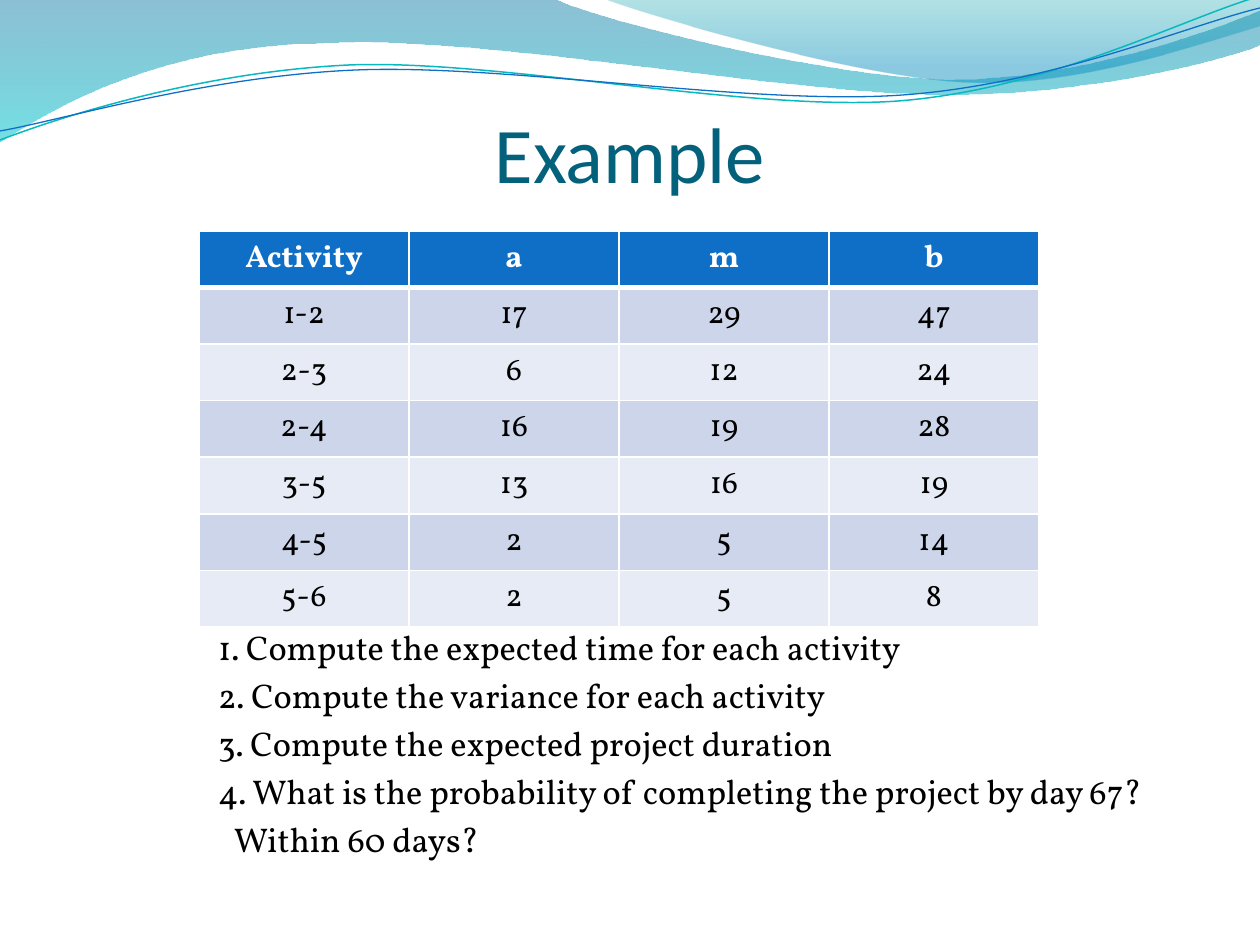
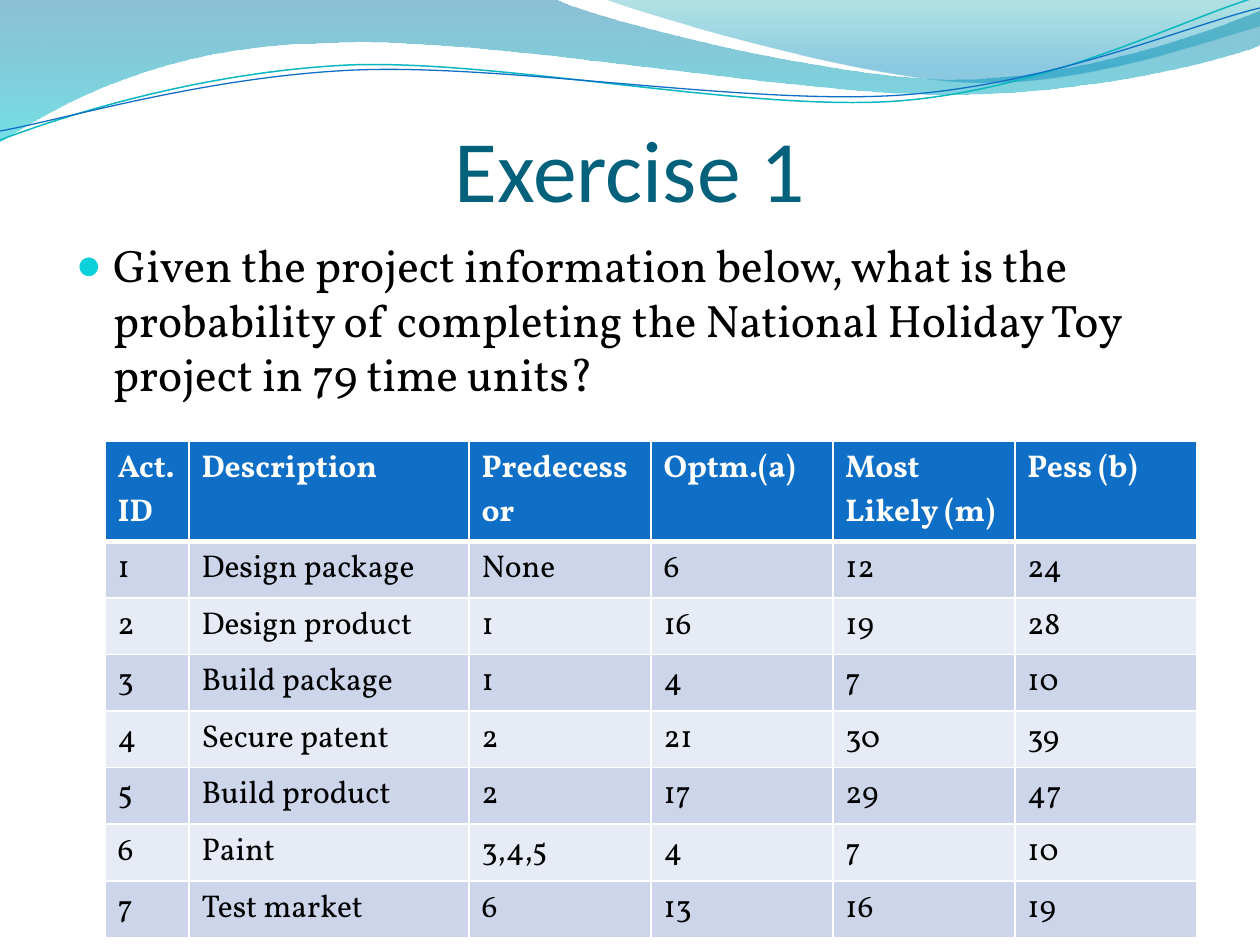
from lxml import etree
from pptx import Presentation
from pptx.dml.color import RGBColor
from pptx.enum.text import MSO_ANCHOR, MSO_AUTO_SIZE, PP_ALIGN
from pptx.oxml.ns import qn
from pptx.util import Pt

CENTER, LEFT = PP_ALIGN.CENTER, PP_ALIGN.LEFT
BOTTOM, TOP = MSO_ANCHOR.BOTTOM, MSO_ANCHOR.TOP
NO_FIT = MSO_AUTO_SIZE.NONE

PX = 914400 / 126  # EMU in one px
TITLE_FONT, TEXT_FONT = "Calibri", "Vollkorn"
COLORS = {
    "title": "04617B", "text": "000000", "white": "FFFFFF", "bullet": "0BD0D9",
    "header": "0F6FC6", "odd_row": "CCD5EA", "even_row": "E7EBF5",
    "wave_top": "0074A1", "wave_bottom": "00C6CF",
    "crest_top": "00A1A9", "crest_bottom": "008BBF",
    "teal_line": "0AB8BF", "blue_line": "0F6FC6",
}

# Content
EXAMPLE = {
    "title": "Example", "title_size": 45, "title_height": 102,
    "body_box": (168, 620, 1029, 325), "body_size": 19.6,
    # text, left indent in px, bulleted
    "body": [
        ("1. Compute the expected time for each activity", 37, False),
        ("2. Compute the variance for each activity", 37, False),
        ("3. Compute the expected project duration", 37, False),
        ("4. What is the probability of completing the project by day 67?", 37, False),
        ("Within 60 days?", 53, False),
    ],
    "table_at": (199, 231), "columns": [210] * 4, "align": CENTER,
    "rows": [
        ("Activity", "a", "m", "b"),
        ("1-2", "17", "29", "47"),
        ("2-3", "6", "12", "24"),
        ("2-4", "16", "19", "28"),
        ("3-5", "13", "16", "19"),
        ("4-5", "2", "5", "14"),
        ("5-6", "2", "5", "8"),
    ],
}
EXERCISE = {
    "title": "Exercise 1", "title_size": 50, "title_height": 123,
    "body_box": (63, 231, 1134, 179), "body_size": 26,
    "body": [
        ("Given the project information below, what is the probability of "
         "completing the National Holiday Toy project in 79 time units?", 37, True),
    ],
    "table_at": (105, 441), "columns": [84, 280] + [182] * 4, "align": LEFT,
    "rows": [
        ("Act. ID", "Description", "Predecessor", "Optm.(a)", "Most Likely (m)", "Pess (b)"),
        ("1", "Design package", "None", "6", "12", "24"),
        ("2", "Design product", "1", "16", "19", "28"),
        ("3", "Build package", "1", "4", "7", "10"),
        ("4", "Secure patent", "2", "21", "30", "39"),
        ("5", "Build product", "2", "17", "29", "47"),
        ("6", "Paint", "3,4,5", "4", "7", "10"),
        ("7", "Test market", "6", "13", "16", "19"),
    ],
}

# Header waves: each step is a line end (2 numbers) or a Bezier curve (6 numbers)
WAVES = [
    {"path": [(0, -1), (554, -1), (600, 21, 837, 79, 955, 79), (1075, 79, 1207, 33, 1260, 11),
              (1261, 45), (1239, 55, 1096, 96, 940, 94), (784, 94, 481, 35, 324, 43),
              (163, 45, 58, 105, -1, 142)],
     "stops": [(0, "wave_top", 45), (1, "wave_bottom", 55)]},
    {"path": [(604, -1), (641, 14, 859, 78, 969, 82), (1079, 87, 1211, 40, 1260, 26), (1260, -1)],
     "stops": [(0, "crest_top", 30), (0.8, "crest_bottom", 45)]},
    {"path": [(0, 140), (60, 117, 199, 72, 349, 65), (498, 59, 747, 112, 898, 101),
              (1050, 89, 1182, 19, 1257, -3)],
     "line": ("teal_line", 0.85)},
    {"path": [(0, 131), (59, 121, 207, 76, 357, 70), (508, 64, 752, 106, 903, 95),
              (1053, 84, 1186, 26, 1260, 8)],
     "line": ("blue_line", 0.75)},
]


def px(length):
    return round(length * PX)


def rgb(name):
    return RGBColor.from_string(COLORS[name])


def add_xml(parent, tag, **attributes):
    return etree.SubElement(parent, qn(tag), attributes)


def add_run(paragraph, text, font, size, color, bold=False):
    run = paragraph.add_run()
    run.text = text
    run.font.name, run.font.size, run.font.bold = font, Pt(size), bold
    run.font.color.rgb = rgb(color)


def place(shape, left, top, width, height):
    shape.left, shape.top, shape.width, shape.height = map(px, (left, top, width, height))


def set_frame(frame, anchor, insets):
    frame.auto_size, frame.word_wrap, frame.vertical_anchor = NO_FIT, True, anchor
    (frame.margin_left, frame.margin_top,
     frame.margin_right, frame.margin_bottom) = map(px, insets)


def build_outline(slide, start, steps, closed):
    """Build a freeform through the step ends, then bend the curved steps."""
    builder = slide.shapes.build_freeform(px(start[0]), px(start[1]))
    builder.add_line_segments([(px(step[-2]), px(step[-1])) for step in steps], close=closed)
    shape = builder.convert_to_shape()
    for segment, step in zip(list(shape.element.iter(qn("a:lnTo"))), steps):
        if len(step) == 6:
            segment.tag = qn("a:cubicBezTo")
            for i in (0, 2):
                control = etree.Element(qn("a:pt"), x=str(px(step[i]) - shape.left),
                                        y=str(px(step[i + 1]) - shape.top))
                segment.insert(i // 2, control)
    return shape


def add_waves(slide):
    """Draw the waves and move them into the layout that the slides share."""
    backdrop = slide.slide_layout.shapes.element
    for depth, wave in enumerate(WAVES):
        start, *steps = wave["path"]
        shape = build_outline(slide, start, steps, "stops" in wave)
        shape.shadow.inherit = False
        if "stops" in wave:
            shape.line.fill.background()
            shape.fill.gradient()
            shape.fill.gradient_angle = 270
            for stop, (position, color, _) in zip(shape.fill.gradient_stops, wave["stops"]):
                stop.position = position
                stop.color.rgb = rgb(color)
            for tint, (_, _, alpha) in zip(shape.element.spPr.iter(qn("a:srgbClr")), wave["stops"]):
                add_xml(tint, "a:alpha", val=str(alpha * 1000))
        else:
            color, width = wave["line"]
            shape.fill.background()
            shape.line.color.rgb = rgb(color)
            shape.line.width = Pt(width)
        backdrop.insert(2 + depth, shape.element)


def add_title(slide, content):
    title = slide.shapes.title
    place(title, 63, 97, 1134, content["title_height"])
    set_frame(title.text_frame, BOTTOM, (0, 6, 0, 0))
    paragraph = title.text_frame.paragraphs[0]
    paragraph.alignment = CENTER
    add_run(paragraph, content["title"], TITLE_FONT, content["title_size"], "title")


def add_body(slide, content):
    body, size = slide.placeholders[1], content["body_size"]
    place(body, *content["body_box"])
    frame = body.text_frame
    set_frame(frame, TOP, (13, 6, 13, 6))
    for i, (text, indent, bulleted) in enumerate(content["body"]):
        paragraph = frame.add_paragraph() if i else frame.paragraphs[0]
        props = paragraph._p.get_or_add_pPr()
        props.set("marL", str(px(indent)))
        props.set("indent", str(px(-indent) if bulleted else 0))
        if bulleted:
            add_xml(add_xml(props, "a:buClr"), "a:srgbClr", val=COLORS["bullet"])
            add_xml(props, "a:buSzPct", val="95000")
            add_xml(props, "a:buChar", char="●")
        else:
            add_xml(props, "a:buNone")
        paragraph.alignment = LEFT
        paragraph.space_before = Pt(size * 0.2 if i else 0)
        add_run(paragraph, text, TEXT_FONT, size, "text")


def set_borders(cell, top_width, bottom_width):
    props = cell._tc.get_or_add_tcPr()
    for side, width in (("L", 1), ("R", 1), ("T", top_width), ("B", bottom_width)):
        border = add_xml(props, "a:ln" + side, w=str(Pt(width)))
        add_xml(add_xml(border, "a:solidFill"), "a:srgbClr", val=COLORS["white"])


def add_activity_table(slide, content):
    rows, columns = content["rows"], content["columns"]
    left, top = content["table_at"]
    row_height = 51
    table = slide.shapes.add_table(len(rows), len(columns), px(left), px(top),
                                   px(sum(columns)), px(row_height * len(rows))).table
    for column, width in zip(table.columns, columns):
        column.width = px(width)
    for r, row in enumerate(rows):
        is_header = r == 0
        fill = "header" if is_header else "odd_row" if r % 2 else "even_row"
        for c, text in enumerate(row):
            cell = table.cell(r, c)
            set_borders(cell, 3 if r == 1 else 1, 3 if is_header else 1)
            cell.fill.solid()
            cell.fill.fore_color.rgb = rgb(fill)
            paragraph = cell.text_frame.paragraphs[0]
            paragraph.alignment = content["align"]
            add_run(paragraph, text, TEXT_FONT, 18, "white" if is_header else "text", is_header)


def main():
    deck = Presentation()
    deck.slide_width, deck.slide_height = px(1260), px(945)
    layout = deck.slide_layouts[1]
    for content in (EXAMPLE, EXERCISE):
        slide = deck.slides.add_slide(layout)
        add_title(slide, content)
        add_body(slide, content)
        add_activity_table(slide, content)
    add_waves(deck.slides[0])
    deck.save("out.pptx")


if __name__ == "__main__":
    main()
